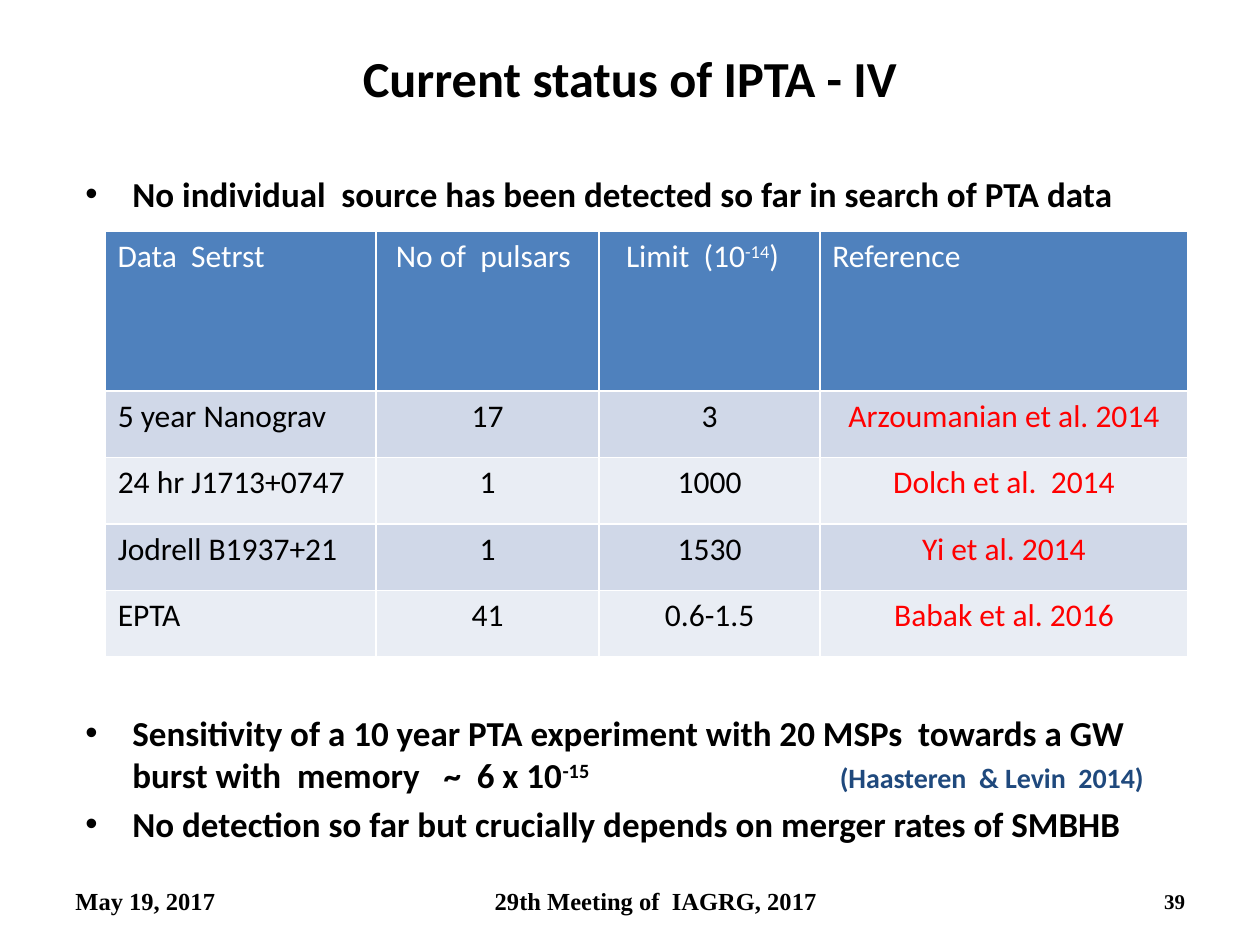
from dataclasses import dataclass
from typing import Any

import lxml.etree
import pptx
import pptx.dml.color
import pptx.enum.text
import pptx.oxml.ns
import pptx.util

Cm = pptx.util.Cm
Pt = pptx.util.Pt
Align = pptx.enum.text.PP_ALIGN
Anchor = pptx.enum.text.MSO_ANCHOR
qn = pptx.oxml.ns.qn

COLOURS = {
    "black": "000000",
    "white": "FFFFFF",
    "red": "FF0000",
    "navy": "1F497D",
    "header": "4F81BD",
    "odd_row": "D0D8E8",
    "even_row": "E9EDF4",
}
SANS, SERIF = "Calibri", "Times New Roman"


@dataclass
class Run:
    text: str
    raised: bool = False


@dataclass
class Style:
    size: float
    font: str = SANS
    colour: str = "black"
    bold: bool = True
    align: Any = Align.LEFT


@dataclass
class TextBox:
    left: float
    top: float
    width: float
    height: float
    paragraphs: list[list[Run]]
    style: Style
    anchor: Any = Anchor.TOP
    bulleted: bool = False


def add_runs(para: Any, runs: list[Run], style: Style) -> None:
    para.alignment = style.align
    for run in runs:
        span = para.add_run()
        span.text = run.text
        span.font.size = Pt(style.size)
        span.font.name = style.font
        span.font.bold = style.bold
        span.font.color.rgb = pptx.dml.color.RGBColor.from_string(COLOURS[style.colour])
        if run.raised:
            span.font._element.set("baseline", "30000")


def add_bullet(para: Any) -> None:
    properties = para._p.get_or_add_pPr()
    properties.set("marL", str(Cm(0.95)))
    properties.set("indent", str(-Cm(0.95)))
    font = lxml.etree.SubElement(properties, qn("a:buFont"))
    font.set("typeface", "Arial")
    lxml.etree.SubElement(properties, qn("a:buChar")).set("char", "•")


def add_text(page: Any, item: TextBox) -> None:
    box = page.shapes.add_textbox(
        Cm(item.left), Cm(item.top), Cm(item.width), Cm(item.height))
    frame = box.text_frame
    frame.word_wrap = True
    frame.vertical_anchor = item.anchor
    for index, runs in enumerate(item.paragraphs):
        para = frame.add_paragraph() if index else frame.paragraphs[0]
        if item.bulleted:
            add_bullet(para)
        if index:
            para.space_before = Pt(4)
        add_runs(para, runs, item.style)


def add_borders(cell: Any) -> None:
    properties = cell._tc.get_or_add_tcPr()
    for position, side in enumerate(("a:lnL", "a:lnR", "a:lnT", "a:lnB")):
        line = lxml.etree.Element(qn(side), w=str(Pt(1)))
        fill = lxml.etree.SubElement(line, qn("a:solidFill"))
        lxml.etree.SubElement(fill, qn("a:srgbClr")).set("val", COLOURS["white"])
        properties.insert(position, line)


def fill_cell(cell: Any, runs: list[Run], fill: str, style: Style) -> None:
    cell.fill.solid()
    cell.fill.fore_color.rgb = pptx.dml.color.RGBColor.from_string(COLOURS[fill])
    add_borders(cell)
    add_runs(cell.text_frame.paragraphs[0], runs, style)


# Table content: column widths, header indents and rows
COLUMN_WIDTHS = [5.46, 4.5, 4.45, 7.42]
HEADER_MARGINS = [0.25, 0.4, 0.54, 0.25]
HEADER_HEIGHT, ROW_HEIGHT = 3.22, 1.34
HEADERS = [
    [Run("Data  Setrst")],
    [Run("No of  pulsars")],
    [Run("Limit  (10"), Run("-14", raised=True), Run(")")],
    [Run("Reference")],
]
LIMITS = [
    ("5 year Nanograv", "17", "3", "Arzoumanian et al. 2014"),
    ("24 hr J1713+0747", "1", "1000", "Dolch et al.  2014"),
    ("Jodrell B1937+21", "1", "1530", "Yi et al. 2014"),
    ("EPTA", "41", "0.6-1.5", "Babak et al. 2016"),
]


def add_limits_table(page: Any, left: float, top: float) -> None:
    height = HEADER_HEIGHT + ROW_HEIGHT * len(LIMITS)
    table = page.shapes.add_table(
        len(LIMITS) + 1, len(HEADERS),
        Cm(left), Cm(top), Cm(sum(COLUMN_WIDTHS)), Cm(height)).table
    for column, width in zip(table.columns, COLUMN_WIDTHS):
        column.width = Cm(width)
    for index, row in enumerate(table.rows):
        row.height = Cm(ROW_HEIGHT if index else HEADER_HEIGHT)

    for column, (runs, margin) in enumerate(zip(HEADERS, HEADER_MARGINS)):
        cell = table.cell(0, column)
        cell.margin_left = Cm(margin)
        fill_cell(cell, runs, "header", Style(18, colour="white", bold=False))

    middle = Style(18, bold=False, align=Align.CENTER)
    styles = [Style(18, bold=False), middle, middle,
              Style(18, colour="red", bold=False, align=Align.CENTER)]
    for row, values in enumerate(LIMITS, start=1):
        fill = "odd_row" if row % 2 else "even_row"
        for column, (value, style) in enumerate(zip(values, styles)):
            fill_cell(table.cell(row, column), [Run(value)], fill, style)


BODY = Style(20)
FOOTER_TOP, FOOTER_HEIGHT = 17.65, 1.02
TEXT_BOXES = [
    # Title
    TextBox(1.27, 0.76, 22.86, 1.6, [[Run("Current status of IPTA - IV")]],
            Style(28.8, align=Align.CENTER), Anchor.MIDDLE),
    # Bullets above and below the table
    TextBox(1.47, 3.35, 22.86, 1.1,
            [[Run("No individual  source has been detected so far in search of PTA data")]],
            BODY, bulleted=True),
    TextBox(1.47, 14.22, 22.5, 3.1,
            [[Run("Sensitivity of a 10 year PTA experiment with 20 MSPs  towards a GW  "
                  "burst with  memory   ~  6 x 10"), Run("-15", raised=True)],
             [Run("No detection so far but crucially depends on merger rates of SMBHB")]],
            BODY, bulleted=True),
    # Citation beside the second bullet
    TextBox(16.68, 15.2, 7, 0.95, [[Run("(Haasteren  & Levin  2014)")]],
            Style(16, colour="navy")),
    # Footer
    TextBox(6.55, FOOTER_TOP, 13.34, FOOTER_HEIGHT, [[Run("29th Meeting of  IAGRG, 2017")]],
            Style(14, SERIF, align=Align.CENTER), Anchor.MIDDLE),
    TextBox(1.27, FOOTER_TOP, 4.65, FOOTER_HEIGHT, [[Run("May 19, 2017")]],
            Style(14, SERIF), Anchor.MIDDLE),
    TextBox(20.96, FOOTER_TOP, 3.18, FOOTER_HEIGHT, [[Run("39")]],
            Style(12, SERIF, align=Align.RIGHT), Anchor.MIDDLE),
]


def main() -> None:
    deck = pptx.Presentation()
    deck.slide_width, deck.slide_height = Cm(25.4), Cm(19.05)
    page = deck.slides.add_slide(deck.slide_layouts[6])
    for item in TEXT_BOXES:
        add_text(page, item)
    add_limits_table(page, 2.12, 4.66)
    deck.save("out.pptx")


if __name__ == "__main__":
    main()
